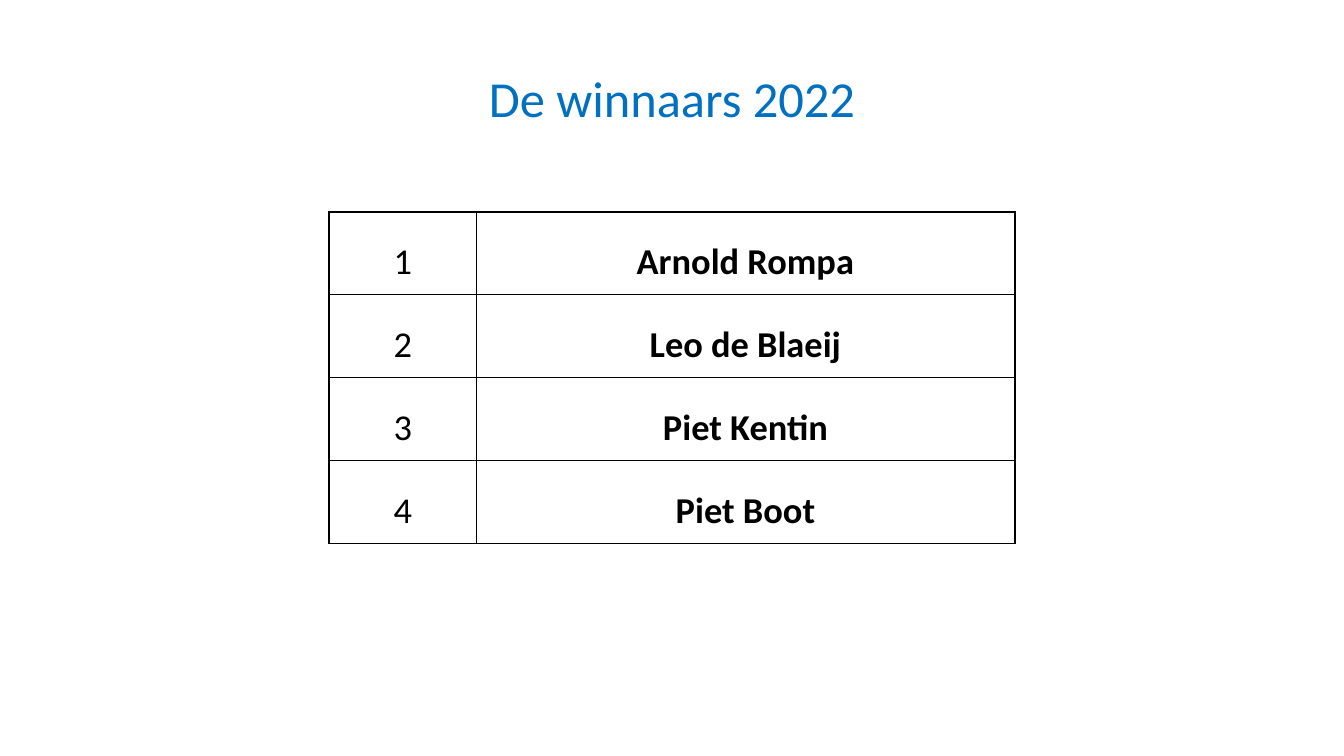
from lxml.etree import SubElement
from pptx import Presentation
from pptx.dml.color import RGBColor
from pptx.enum.text import MSO_ANCHOR, PP_ALIGN
from pptx.oxml.ns import qn
from pptx.util import Inches, Pt

HUES = {"title": "0070C0", "ink": "000000"}
NAMES = ["Arnold Rompa", "Leo de Blaeij", "Piet Kentin", "Piet Boot"]


class Deck:
    face = "Calibri"
    thin, thick = 0.75, 1.5

    def __init__(self, wide, high):
        self.file = Presentation()
        self.file.slide_width = Inches(wide)
        self.file.slide_height = Inches(high)
        self.slide = self.file.slides.add_slide(self.file.slide_layouts[6])

    def x(self, share):
        return int(self.file.slide_width * share / 100)

    def y(self, share):
        return int(self.file.slide_height * share / 100)

    def label(self, frame, text, size, hue, space, bold=False):
        line = frame.paragraphs[0]
        line.text = text
        line.alignment = PP_ALIGN.CENTER
        line.line_spacing = space
        font = line.font
        font.name, font.size, font.bold = self.face, Pt(size), bold
        font.color.rgb = RGBColor.from_string(HUES[hue])

    def title(self, text, top, wide, high):
        box = self.slide.shapes.add_textbox(
            self.x((100 - wide) / 2), self.y(top), self.x(wide), self.y(high))
        frame = box.text_frame
        frame.word_wrap = True
        frame.vertical_anchor = MSO_ANCHOR.BOTTOM
        self.label(frame, text, 36, "title", 0.9)

    def edge(self, cell, side, width):
        line = SubElement(cell._tc.get_or_add_tcPr(), qn(f"a:ln{side}"), w=str(Pt(width)))
        fill = SubElement(line, qn("a:solidFill"))
        SubElement(fill, qn("a:srgbClr"), val=HUES["ink"])

    def cell(self, cell, text, bold, first, last):
        cell.margin_left = cell.margin_right = Inches(0.03)
        cell.margin_top = cell.margin_bottom = Inches(0.1)
        cell.vertical_anchor = MSO_ANCHOR.BOTTOM
        self.label(cell.text_frame, text, 26, "ink", 1.15, bold)
        widths = {"L": self.thick, "R": self.thick,
                  "T": self.thick if first else self.thin,
                  "B": self.thick if last else self.thin}
        for side, width in widths.items():
            self.edge(cell, side, width)
        cell.fill.background()

    def ranks(self, names, top, cols, high):
        wide = sum(cols)
        count = len(names)
        grid = self.slide.shapes.add_table(
            count, len(cols), self.x((100 - wide) / 2), self.y(top),
            self.x(wide), self.y(high)).table
        grid.first_row = grid.horz_banding = False
        for col, share in zip(grid.columns, cols):
            col.width = self.x(share)
        for row, name in enumerate(names):
            grid.rows[row].height = self.y(high / count)
            for col, text in enumerate((str(row + 1), name)):
                self.cell(grid.cell(row, col), text, col == 1, row == 0, row == count - 1)


def main():
    deck = Deck(13.33, 7.5)
    deck.title("De winnaars 2022", top=6.13, wide=86.25, high=11.5)
    deck.ranks(NAMES, top=28, cols=(10.95, 40.05), high=43.9)
    deck.file.save("out.pptx")


if __name__ == "__main__":
    main()
